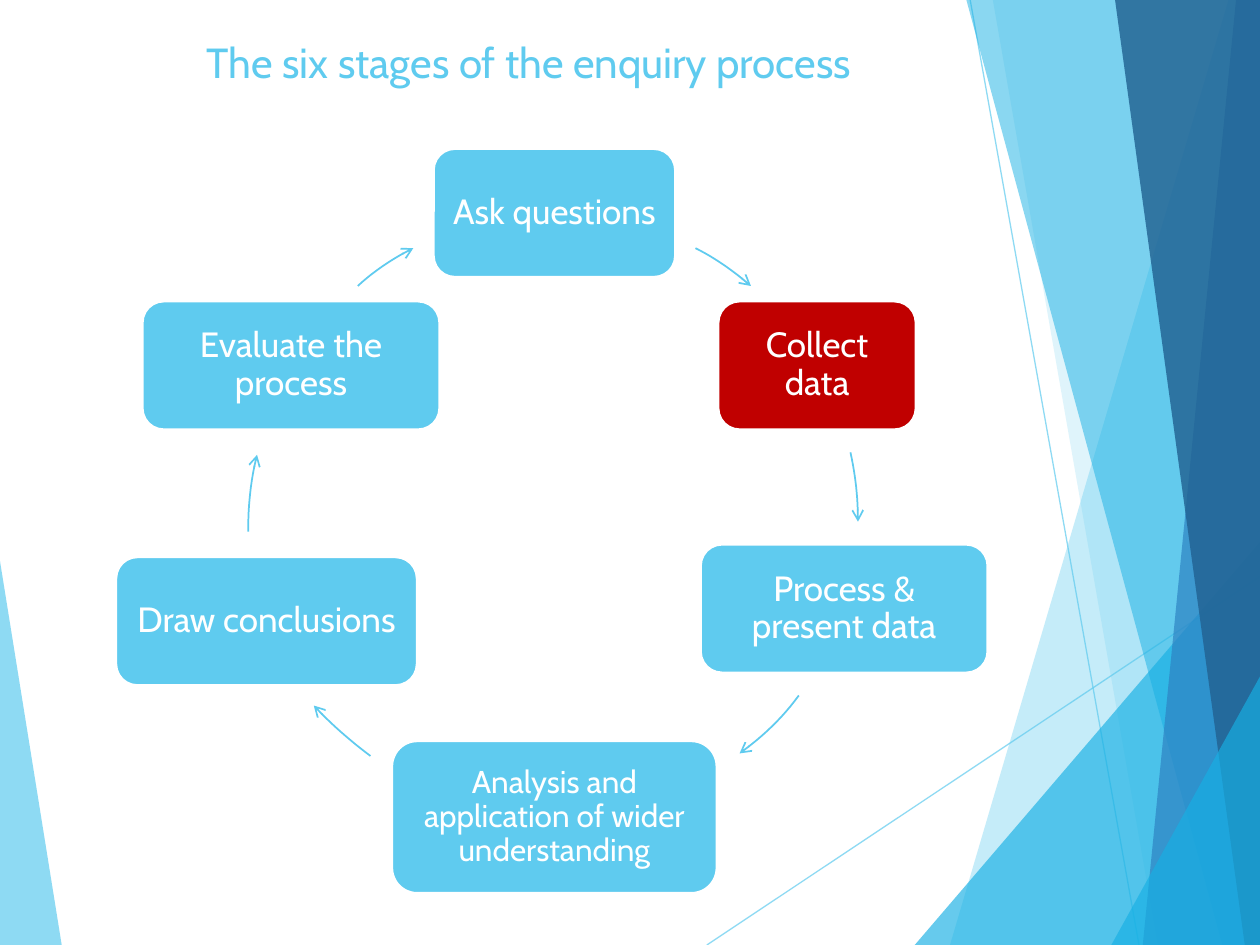
import lxml.etree
import pptx
import pptx.dml.color
import pptx.enum.shapes
import pptx.enum.text
import pptx.oxml.ns
import pptx.util
from pptx.util import Inches

SKY = pptx.dml.color.RGBColor(0x5F, 0xCB, 0xEF)
CYAN = pptx.dml.color.RGBColor(0x17, 0xB0, 0xE4)
BLUE = pptx.dml.color.RGBColor(0x2E, 0x83, 0xC3)
NAVY = pptx.dml.color.RGBColor(0x22, 0x62, 0x92)
RED = pptx.dml.color.RGBColor(0xC0, 0x00, 0x00)
WHITE = pptx.dml.color.RGBColor(0xFF, 0xFF, 0xFF)
qn = pptx.oxml.ns.qn

deck = pptx.Presentation()
deck.slide_width, deck.slide_height = Inches(10), Inches(7.5)
slide = deck.slides.add_slide(deck.slide_layouts[5])


def set_opacity(shape, percent):
    for color in shape._element.spPr.iter(qn("a:srgbClr")):
        lxml.etree.SubElement(color, qn("a:alpha"), val=str(percent * 1000))


def draw_outline(points, close):
    corners = [(Inches(x), Inches(y)) for x, y in points]
    builder = slide.shapes.build_freeform(*corners[0], scale=1.0)
    builder.add_line_segments(corners[1:], close=close)
    outline = builder.convert_to_shape()
    outline.shadow.inherit = False
    return outline


left_facet = ([(-0.01, 4.39), (0.49, 7.5), (-0.01, 7.5)], SKY, 70)
right_facets = [
    ([(9.75, 0), (7.54, 7.5), (10.01, 7.5), (10.01, 0)], SKY, 36),
    ([(7.88, 0), (9.19, 7.5), (10.01, 7.5), (10.01, 0)], SKY, 20),
    ([(7.26, 7.5), (10.01, 4.29), (10.01, 7.5)], CYAN, 66),
    ([(7.67, 0), (9.7, 7.5), (10.01, 7.5), (10.01, 0)], CYAN, 50),
    ([(9.81, 0), (9.07, 7.5), (10.01, 7.5), (10.01, 0)], BLUE, 70),
    ([(8.85, 0), (9.88, 7.5), (10.01, 7.5), (10.01, 0)], NAVY, 82),
    ([(8.82, 7.5), (10.01, 5.35), (10.01, 7.5)], CYAN, 66),
]
for start_x, start_y, end_x, end_y in [(5.61, 7.5, 10.01, 4.57), (7.7, 0, 9.04, 7.5)]:
    ray = slide.shapes.add_connector(
        pptx.enum.shapes.MSO_CONNECTOR.STRAIGHT,
        Inches(start_x), Inches(start_y), Inches(end_x), Inches(end_y))
    ray.line.color.rgb = SKY
    ray.line.width = pptx.util.Pt(0.75)
    set_opacity(ray, 70)
    lxml.etree.SubElement(ray._element.spPr, qn("a:effectLst"))
for points, color, opacity in [left_facet] + right_facets:
    facet = draw_outline(points, close=True)
    facet.fill.solid()
    facet.fill.fore_color.rgb = color
    facet.line.fill.background()
    set_opacity(facet, opacity)

stages = [
    ("Ask questions", 3.44, 1.18, 1.92, 1.02, SKY, 20, 0.08),
    ("Collect data", 5.7, 2.39, 1.57, 1.02, RED, 20, 0.08),
    ("Process & present data", 5.56, 4.32, 2.28, 1.02, SKY, 20, 0.08),
    ("Analysis and application of wider understanding",
     3.11, 5.88, 2.58, 1.21, SKY, 18, 0.07),
    ("Draw conclusions", 0.92, 4.42, 2.39, 1.02, SKY, 20, 0.08),
    ("Evaluate the process", 1.13, 2.39, 2.36, 1.02, SKY, 20, 0.08),
]
for name, left, top, width, height, color, size, inset in stages:
    stage = slide.shapes.add_shape(
        pptx.enum.shapes.MSO_SHAPE.ROUNDED_RECTANGLE,
        Inches(left), Inches(top), Inches(width), Inches(height))
    stage.shadow.inherit = False
    stage.fill.solid()
    stage.fill.fore_color.rgb = color
    stage.line.color.rgb = WHITE
    stage.line.width = pptx.util.Pt(1.5)
    frame = stage.text_frame
    frame.word_wrap = True
    frame.vertical_anchor = pptx.enum.text.MSO_ANCHOR.MIDDLE
    frame.margin_left = frame.margin_right = Inches(inset)
    frame.margin_top = frame.margin_bottom = Inches(inset)
    label = frame.paragraphs[0]
    label.alignment = pptx.enum.text.PP_ALIGN.CENTER
    label.line_spacing = 0.9
    run = label.add_run()
    run.text = name
    run.font.name = "Cabin"
    run.font.size = pptx.util.Pt(size)
    run.font.color.rgb = WHITE

STEPS = 12
cycle_curves = [
    [(5.52, 1.97), (5.68, 2.05), (5.82, 2.15), (5.96, 2.27)],
    [(6.75, 3.59), (6.79, 3.77), (6.81, 3.95), (6.81, 4.14)],
    [(6.34, 5.52), (6.21, 5.7), (6.05, 5.85), (5.87, 5.98)],
    [(2.94, 6), (2.78, 5.88), (2.63, 5.75), (2.49, 5.6)],
    [(1.97, 4.22), (1.97, 4.01), (1.99, 3.81), (2.04, 3.61)],
    [(2.84, 2.27), (2.97, 2.15), (3.12, 2.05), (3.28, 1.97)],
]
for controls in cycle_curves:
    arc = []
    for step in range(STEPS + 1):
        t = step / STEPS
        weights = [(1 - t) ** 3, 3 * t * (1 - t) ** 2, 3 * t ** 2 * (1 - t), t ** 3]
        arc.append([sum(w * point[axis] for w, point in zip(weights, controls))
                    for axis in (0, 1)])
    arrow = draw_outline(arc, close=False)
    arrow.fill.background()
    arrow.line.color.rgb = SKY
    arrow.line.width = pptx.util.Pt(1)
    lxml.etree.SubElement(arrow.line._get_or_add_ln(), qn("a:tailEnd"), type="arrow")

title = slide.shapes.title
title.left, title.top = Inches(1.54), Inches(0.24)
title.width, title.height = Inches(6.94), Inches(1.44)
title.text_frame.word_wrap = True
title.text_frame.auto_size = pptx.enum.text.MSO_AUTO_SIZE.NONE
title.text_frame.vertical_anchor = pptx.enum.text.MSO_ANCHOR.TOP
heading = title.text_frame.paragraphs[0]
heading.alignment = pptx.enum.text.PP_ALIGN.LEFT
run = heading.add_run()
run.text = "The six stages of the enquiry process"
run.font.name = "Cabin"
run.font.size = pptx.util.Pt(24)
run.font.color.rgb = SKY

deck.save("out.pptx")
